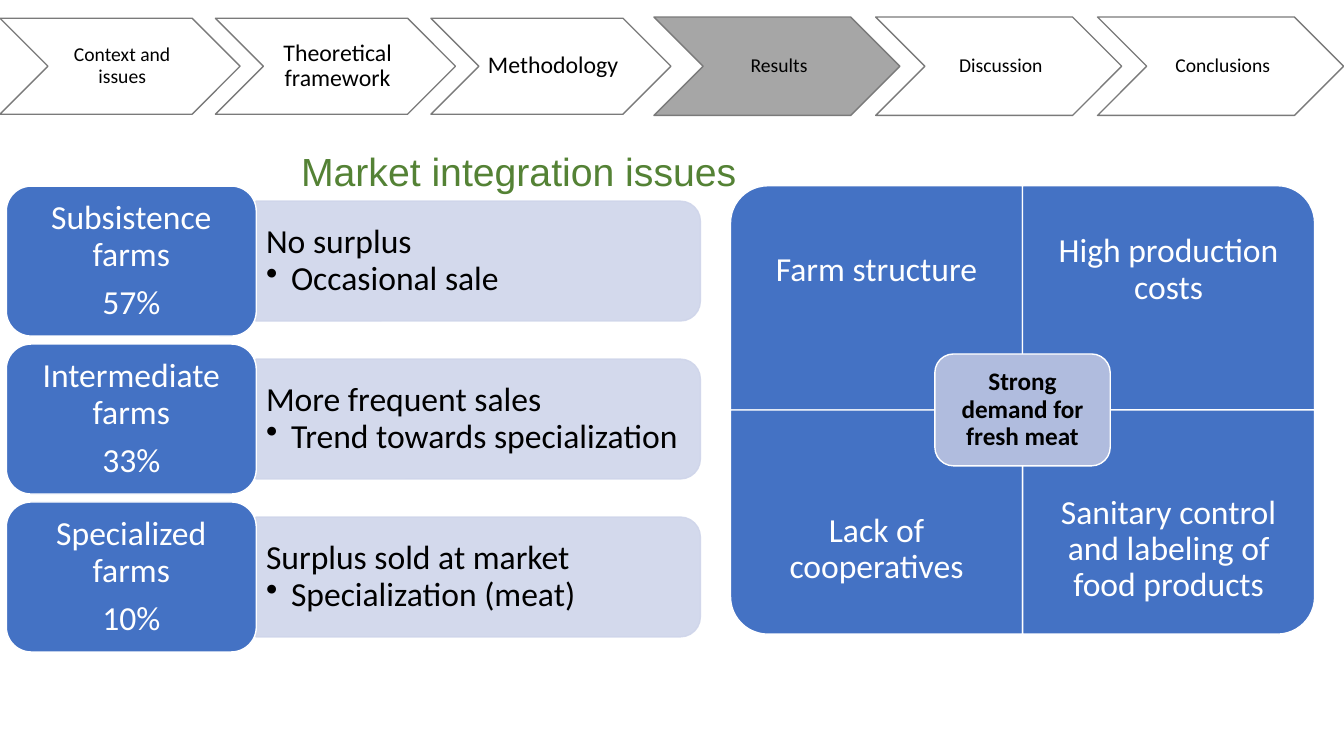
from lxml import etree
from pptx import Presentation
from pptx.dml.color import RGBColor
from pptx.enum.shapes import MSO_SHAPE as SHAPE
from pptx.enum.text import MSO_ANCHOR as ANCHOR, PP_ALIGN as ALIGN
from pptx.oxml.ns import qn
from pptx.util import Cm, Pt

WHITE = RGBColor(0xFF, 0xFF, 0xFF)
BLACK = RGBColor(0x00, 0x00, 0x00)
BLUE = RGBColor(0x44, 0x72, 0xC4)
PALE_BLUE = RGBColor(0xCF, 0xD5, 0xEA)
MID_BLUE = RGBColor(0xB0, 0xBC, 0xDE)
GREEN = RGBColor(0x54, 0x82, 0x35)
GREY = RGBColor(0xA6, 0xA6, 0xA6)
OUTLINE = RGBColor(0x7A, 0x7A, 0x7A)

deck = Presentation()
deck.slide_width, deck.slide_height = Cm(33.87), Cm(19.05)
slide = deck.slides.add_slide(deck.slide_layouts[6])


def block(kind, center_x, center_y, width, height, fill=None, line=WHITE, rotation=0):
    left, top = center_x - width / 2, center_y - height / 2
    box = Cm(left), Cm(top), Cm(width), Cm(height)
    if kind is None:
        return slide.shapes.add_textbox(*box)
    shape = slide.shapes.add_shape(kind, *box)
    shape.shadow.inherit = False
    shape.rotation = rotation
    if fill is None:
        shape.fill.background()
    else:
        shape.fill.solid()
        shape.fill.fore_color.rgb = fill
    shape.line.color.rgb = line
    shape.line.width = Pt(1)
    return shape


def write(shape, lines, size, color, align=ALIGN.CENTER, insets=(0.25, 0.13, 0.25, 0.13),
          space=0.35, bold=False, font="Calibri", anchor=ANCHOR.MIDDLE):
    frame = shape.text_frame
    frame.word_wrap = True
    frame.vertical_anchor = anchor
    frame.margin_left, frame.margin_top, frame.margin_right, frame.margin_bottom = map(Cm, insets)
    frame.text = "\n".join(lines)
    for paragraph in frame.paragraphs:
        paragraph.alignment = align
        paragraph.line_spacing = 0.9
        paragraph.space_after = Pt(size * space)
        paragraph.font.name = font
        paragraph.font.size = Pt(size)
        paragraph.font.bold = bold
        paragraph.font.color.rgb = color
    return frame


farms = [
    ("Subsistence farms", "57%", "No surplus", "Occasional sale"),
    ("Intermediate farms", "33%", "More frequent sales", "Trend towards specialization"),
    ("Specialized farms", "10%", "Surplus sold at market", "Specialization (meat)"),
]
for row, (farm, share, sales, detail) in enumerate(farms):
    middle = 6.58 + row * 3.98
    bar = block(SHAPE.ROUND_2_SAME_RECTANGLE, 12.05, middle, 3.02, 11.2,
                PALE_BLUE, PALE_BLUE, 90)
    for tint in bar.element.spPr.iter(qn("a:srgbClr")):
        etree.SubElement(tint, qn("a:alpha"), val="90000")

    sales_text = block(None, 11.98, middle, 11.05, 2.74)
    bulleted = write(sales_text, [sales, detail], 24, BLACK, ALIGN.LEFT, space=0).paragraphs[1]
    indent = bulleted._p.get_or_add_pPr()
    indent.set("marL", str(Cm(0.63)))
    indent.set("indent", str(-Cm(0.63)))
    bullet = etree.Element(qn("a:buChar"), char="•")
    indent.insert_element_before(bullet, "a:defRPr")

    label = block(SHAPE.ROUNDED_RECTANGLE, 3.31, middle, 6.3, 3.78, BLUE)
    write(label, [farm, share], 24, WHITE)

hub_x, hub_y = 25.77, 10.33
quarter_width, quarter_height = 7.36, 5.65
issues = [
    ("Farm structure", -1, -1, 270),
    ("High production costs", 1, -1, 0),
    ("Lack of cooperatives", -1, 1, 180),
    ("Sanitary control and labeling of food products", 1, 1, 90),
]
for issue, side_x, side_y, rotation in issues:
    x = hub_x + side_x * quarter_width / 2
    y = hub_y + side_y * quarter_height / 2
    size = quarter_width, quarter_height
    if rotation % 180:
        size = size[::-1]
    block(SHAPE.ROUND_1_RECTANGLE, x, y, *size, BLUE, rotation=rotation)
    issue_text = block(None, x, hub_y + side_y * 3.52, quarter_width, 4.24)
    write(issue_text, [issue], 24, WHITE, insets=[0.48] * 4)

hub = block(SHAPE.ROUNDED_RECTANGLE, hub_x, hub_y, 4.42, 2.82, MID_BLUE)
write(hub, ["Strong demand for fresh meat"], 18, BLACK, insets=[0.18] * 4, bold=True)

title = block(None, 13.07, 4.23, 20.45, 1.65)
write(title, ["Market integration issues"], 28, GREEN, space=0, font="Arial", anchor=ANCHOR.BOTTOM)

step_groups = [
    (0, 5.43, 6.05, 2.42,
     [("Context and issues", 14, None), ("Theoretical framework", 17, None),
      ("Methodology", 17, None)]),
    (16.48, 5.59, 6.2, 2.48,
     [("Results", 14, GREY), ("Discussion", 14, None), ("Conclusions", 14, None)]),
]
for start, pitch, width, height, steps in step_groups:
    for position, (step, size, fill) in enumerate(steps):
        chevron = block(SHAPE.CHEVRON, start + width / 2 + position * pitch, 1.67,
                        width, height, fill, OUTLINE)
        write(chevron, [step], size, BLACK, insets=(0.16, 0.05, 0.05, 0.05))

deck.save("out.pptx")
